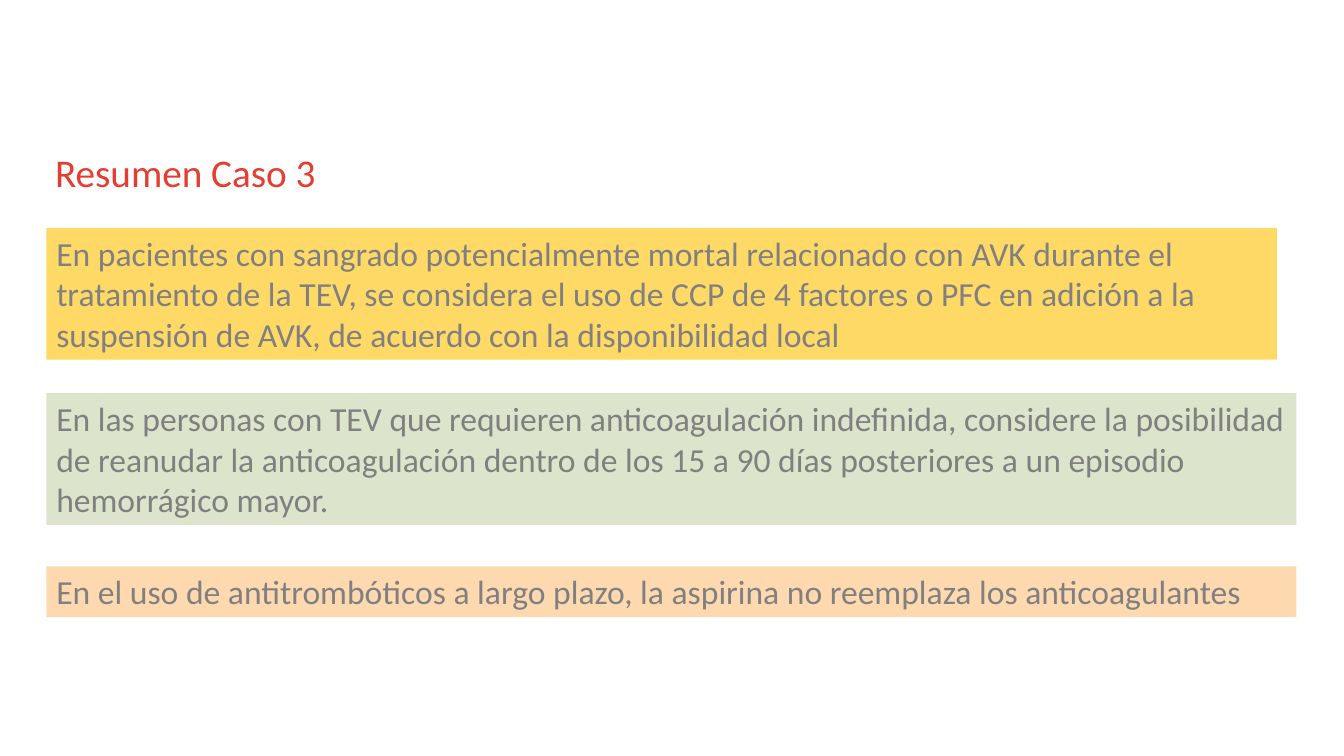
from lxml import etree
from pptx import Presentation
from pptx.dml.color import RGBColor
from pptx.enum import shapes, text
from pptx.oxml import ns
from pptx.util import Pt

RED = RGBColor(0xE5, 0x3E, 0x31)
GRAY = RGBColor(0x80, 0x80, 0x80)
YELLOW = RGBColor(0xFF, 0xD9, 0x66)
GREEN = RGBColor(0xC9, 0xD7, 0xAF)
ORANGE = RGBColor(0xFE, 0xD9, 0xB0)

TITLE = "Resumen Caso 3"
MESSAGES = [
    {"text": "En pacientes con sangrado potencialmente mortal relacionado con AVK durante el "
             "tratamiento de la TEV, se considera el uso de CCP de 4 factores o PFC en adición a la "
             "suspensión de AVK, de acuerdo con la disponibilidad local",
     "top": 162.8, "width": 879, "lines": 3, "fill": YELLOW, "opacity": 100},
    {"text": "En las personas con TEV que requieren anticoagulación indefinida, considere la "
             "posibilidad de reanudar la anticoagulación dentro de los 15 a 90 días posteriores a "
             "un episodio hemorrágico mayor.",
     "top": 280.8, "width": 893, "lines": 3, "fill": GREEN, "opacity": 64},
    {"text": "En el uso de antitrombóticos a largo plazo, la aspirina no reemplaza los anticoagulantes",
     "top": 404.6, "width": 893, "lines": 1, "fill": ORANGE, "opacity": 100},
]

LEFT = 33.1
LINE_HEIGHT = 29
PADDING = 7.2
TITLE_FRAME = {"margin_left": Pt(6.3), "margin_right": 0, "margin_top": 0, "margin_bottom": 0}
MESSAGE_FRAME = {"auto_size": text.MSO_AUTO_SIZE.SHAPE_TO_FIT_TEXT}
TITLE_FONT = {"name": "Calibri", "size": Pt(28)}
MESSAGE_FONT = {"name": "Calibri", "size": Pt(24)}


def write(shape, words, frame_format, font_format, color):
    frame = shape.text_frame
    frame.word_wrap = True
    frame.vertical_anchor = text.MSO_ANCHOR.TOP
    for name, value in frame_format.items():
        setattr(frame, name, value)
    paragraph = frame.paragraphs[0]
    paragraph.alignment = text.PP_ALIGN.LEFT
    run = paragraph.add_run()
    run.text = words
    for name, value in font_format.items():
        setattr(run.font, name, value)
    run.font.color.rgb = color


def add_message(slide, message):
    height = message["lines"] * LINE_HEIGHT + PADDING
    shape = slide.shapes.add_shape(
        shapes.MSO_SHAPE.RECTANGLE,
        Pt(LEFT), Pt(message["top"]), Pt(message["width"]), Pt(height))
    shape.shadow.inherit = False
    shape.line.fill.background()
    shape.fill.solid()
    shape.fill.fore_color.rgb = message["fill"]
    if message["opacity"] < 100:
        color = shape._element.spPr.find(ns.qn("a:solidFill"))[0]
        etree.SubElement(color, ns.qn("a:alpha"), val=str(message["opacity"] * 1000))
    write(shape, message["text"], MESSAGE_FRAME, MESSAGE_FONT, GRAY)


def main():
    presentation = Presentation()
    presentation.slide_width, presentation.slide_height = Pt(960), Pt(540)
    slide = presentation.slides.add_slide(presentation.slide_layouts[6])
    title = slide.shapes.add_textbox(Pt(LEFT), Pt(105.8), Pt(864), Pt(56))
    write(title, TITLE, TITLE_FRAME, TITLE_FONT, RED)
    for message in MESSAGES:
        add_message(slide, message)
    presentation.save("out.pptx")


if __name__ == "__main__":
    main()
